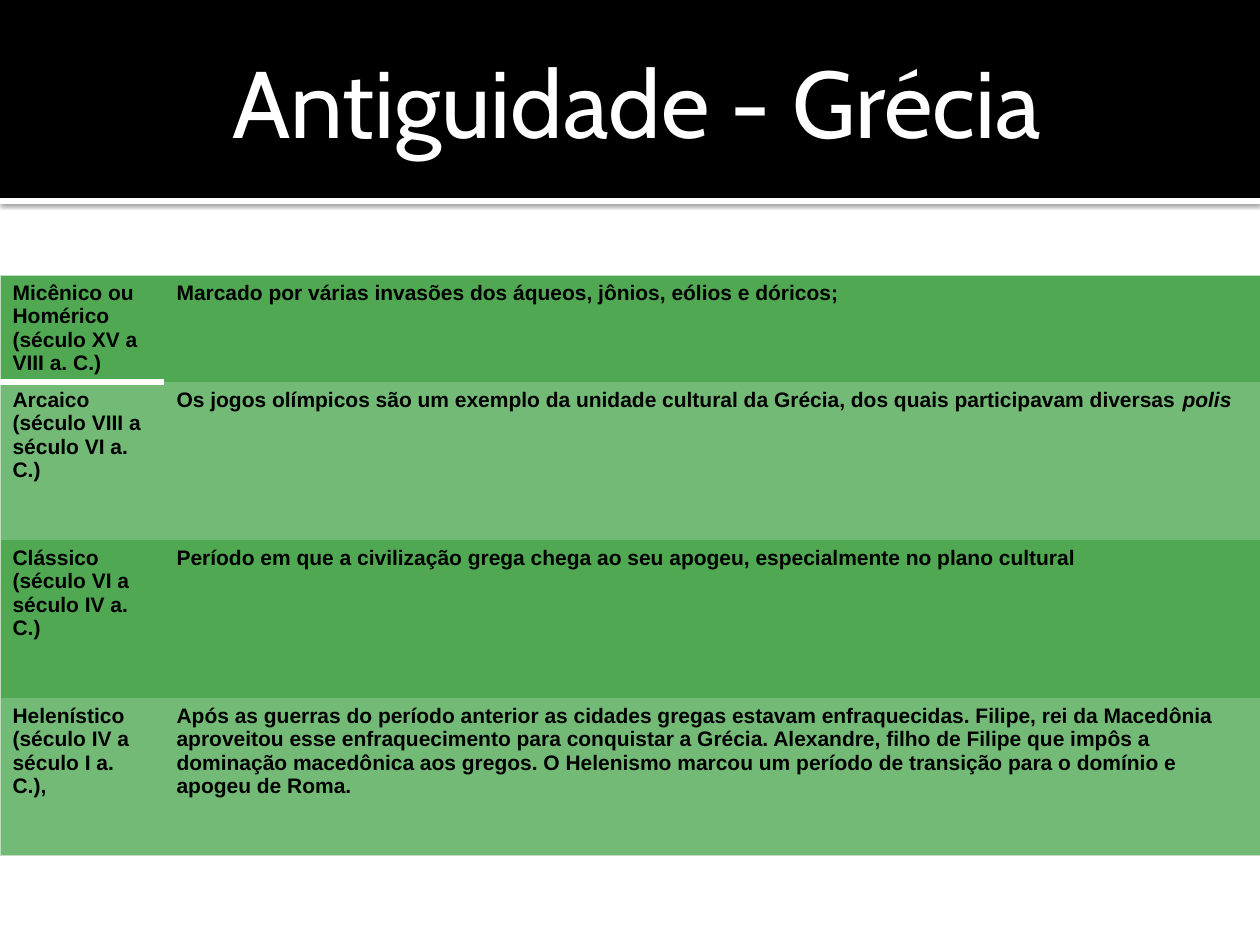
import pptx
import pptx.dml.color
import pptx.enum.shapes
import pptx.enum.text
import pptx.oxml
import pptx.oxml.ns
import pptx.util

RGB = pptx.dml.color.RGBColor
BLACK = RGB(0x00, 0x00, 0x00)
WHITE = RGB(0xFF, 0xFF, 0xFF)
GREEN = RGB(0x50, 0xA8, 0x52)
LIGHT_GREEN = RGB(0x73, 0xBA, 0x76)
EDGE = RGB(0xC2, 0xDB, 0xC3)

# Content: period, then the runs of its description as (text, italic)
TITLE = "Antiguidade - Grécia"
PERIODS = [
    ("Micênico ou Homérico (século XV a VIII a. C.)",
     [("Marcado por várias invasões dos áqueos, jônios, eólios e dóricos;", False)]),
    ("Arcaico (século VIII a século VI a. C.)",
     [("Os jogos olímpicos são um exemplo da unidade cultural da Grécia, "
       "dos quais participavam diversas ", False), ("polis", True)]),
    ("Clássico (século VI a século IV a. C.)",
     [("Período em que a civilização grega chega ao seu apogeu, "
       "especialmente no plano cultural", False)]),
    ("Helenístico (século IV a século I a. C.),",
     [("Após as guerras do período anterior as cidades gregas estavam "
       "enfraquecidas. Filipe, rei da Macedônia aproveitou esse enfraquecimento "
       "para conquistar a Grécia. Alexandre, filho de Filipe que impôs a dominação "
       "macedônica aos gregos. O Helenismo marcou um período de transição para o "
       "domínio e apogeu de Roma.", False)]),
]

# Layout in px, 126 to the inch
WIDTH, HEIGHT = 1260, 945
BAND_H, RULE_H = 198, 6
TITLE_BOX = (212, 37, 849, 127)
TABLE_TOP = 275
COLS = [164, 1096]
ROWS = [106, 158, 158, 158]


def px(n):
    return pptx.util.Emu(round(n * 914400 / 126))


def add_bar(s, top, height, color):
    bar = s.shapes.add_shape(pptx.enum.shapes.MSO_SHAPE.RECTANGLE,
                             0, px(top), px(WIDTH), px(height))
    bar.fill.solid()
    bar.fill.fore_color.rgb = color
    bar.line.fill.background()
    bar.shadow.inherit = False
    return bar


def add_shadow(shape):
    effects = shape.element.spPr.find(pptx.oxml.ns.qn("a:effectLst"))
    effects.append(pptx.oxml.parse_xml(
        f'<a:outerShdw {pptx.oxml.ns.nsdecls("a")} blurRad="31750" dist="10160" '
        'dir="5400000" rotWithShape="0"><a:srgbClr val="000000">'
        '<a:alpha val="60000"/></a:srgbClr></a:outerShdw>'))


def set_borders(cell, borders):
    tc_pr = cell._tc.get_or_add_tcPr()
    for side in "LRTB":
        color, points = borders.get(side, (None, 0))
        fill = (f'<a:solidFill><a:srgbClr val="{color}"/></a:solidFill>'
                if color else "<a:noFill/>")
        tc_pr.append(pptx.oxml.parse_xml(
            f'<a:ln{side} {pptx.oxml.ns.nsdecls("a")} '
            f'w="{pptx.util.Pt(points)}">{fill}</a:ln{side}>'))


def cell_borders(i, j):
    edge = (EDGE, 0.5)
    borders = {"R" if j else "L": edge}
    if i == 0:
        borders["T"] = edge
    if i == len(ROWS) - 1:
        borders["B"] = edge
    if j == 0 and i == 0:
        borders["B"] = (WHITE, 3.82)
    if j == 0 and i == 1:
        borders["T"] = (WHITE, 3.82)
    return borders


def add_run(p, text, font, size, color):
    r = p.add_run()
    r.text = text
    r.font.name = font
    r.font.size = pptx.util.Pt(size)
    r.font.color.rgb = color
    return r


prs = pptx.Presentation()
prs.slide_width, prs.slide_height = px(WIDTH), px(HEIGHT)
s = prs.slides.add_slide(prs.slide_layouts[5])

# Header band with its white rule
add_shadow(add_bar(s, BAND_H, RULE_H, WHITE))
add_bar(s, 0, BAND_H, BLACK)

# Table of periods
frame = s.shapes.add_table(len(ROWS), len(COLS), 0, px(TABLE_TOP),
                           px(sum(COLS)), px(sum(ROWS)))
table = frame.table
table.first_row = table.horz_banding = False
for col, width in zip(table.columns, COLS):
    col.width = px(width)
for i, (period, description) in enumerate(PERIODS):
    table.rows[i].height = px(ROWS[i])
    for j, runs in enumerate([[(period, False)], description]):
        cell = table.cell(i, j)
        set_borders(cell, cell_borders(i, j))
        cell.fill.solid()
        cell.fill.fore_color.rgb = LIGHT_GREEN if i % 2 else GREEN
        p = cell.text_frame.paragraphs[0]
        for text, italic in runs:
            r = add_run(p, text, "Arial", 12, BLACK)
            r.font.bold = True
            r.font.italic = italic

# Title, in front of the band
title = s.shapes.title
title.left, title.top, title.width, title.height = map(px, TITLE_BOX)
title.element.getparent().append(title.element)
tf = title.text_frame
tf.auto_size = pptx.enum.text.MSO_AUTO_SIZE.NONE
tf.word_wrap = False
p = tf.paragraphs[0]
p.alignment = pptx.enum.text.PP_ALIGN.CENTER
add_run(p, TITLE, "Cabin", 54, WHITE)

prs.save("out.pptx")
